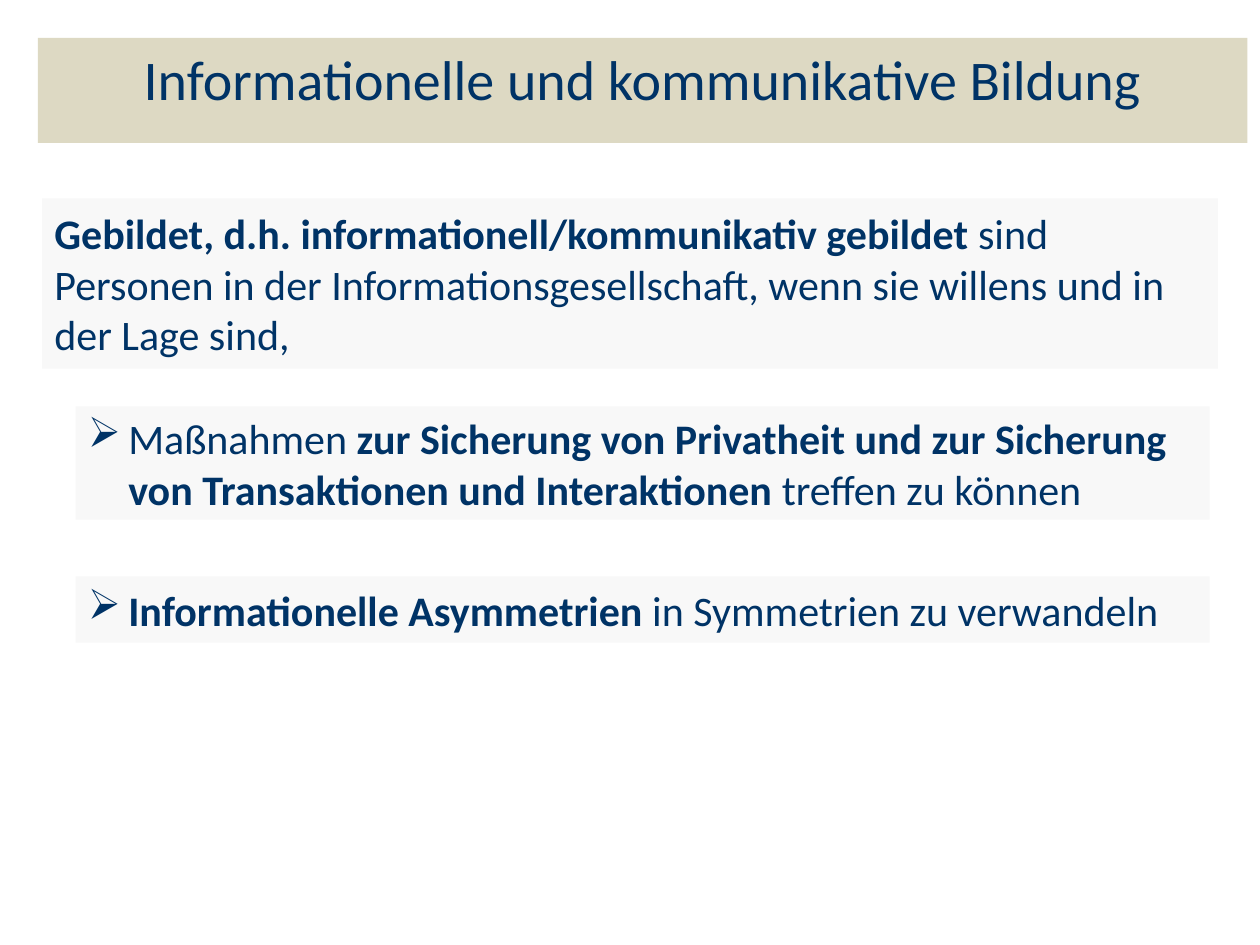
from pptx import Presentation
from pptx.dml.color import RGBColor
from pptx.enum.shapes import MSO_SHAPE
from pptx.enum.text import MSO_ANCHOR, MSO_AUTO_SIZE, PP_ALIGN
from pptx.oxml.ns import qn
from pptx.util import Inches, Pt
from lxml import etree

RECTANGLE = MSO_SHAPE.RECTANGLE
TOP, MIDDLE = MSO_ANCHOR.TOP, MSO_ANCHOR.MIDDLE
LEFT, CENTER = PP_ALIGN.LEFT, PP_ALIGN.CENTER
GROW = MSO_AUTO_SIZE.SHAPE_TO_FIT_TEXT
TITLE_ONLY = 5
COLORS = {"text": "003366", "panel": "F8F8F8", "banner": "DDD9C3"}


class SlideBuilder:
    font = "Calibri"
    title_size = 32
    body_size = 24
    bullet_indent = Inches(0.32)

    def __init__(self, deck):
        self.width, self.height = deck.slide_width, deck.slide_height
        self.page = deck.slides.add_slide(deck.slide_layouts[TITLE_ONLY])

    def frame(self, left, top, width, height):
        return (round(left * self.width), round(top * self.height),
                round(width * self.width), round(height * self.height))

    def paint(self, shape, color):
        shape.fill.solid()
        shape.fill.fore_color.rgb = RGBColor.from_string(COLORS[color])
        shape.line.fill.background()

    def set_spans(self, shape, spans, size, align, anchor):
        text_frame = shape.text_frame
        text_frame.word_wrap = True
        text_frame.auto_size = GROW
        text_frame.vertical_anchor = anchor
        para = text_frame.paragraphs[0]
        para.alignment = align
        for text, bold in spans:
            span = para.add_run()
            span.text = text
            span.font.name = self.font
            span.font.size = Pt(size)
            span.font.bold = bold
            span.font.color.rgb = RGBColor.from_string(COLORS["text"])
        return para

    def title(self, text, area):
        box = self.page.shapes.title
        box.left, box.top, box.width, box.height = self.frame(*area)
        self.paint(box, "banner")
        self.set_spans(box, [(text, False)], self.title_size, CENTER, TOP)

    def panel(self, spans, area):
        box = self.page.shapes.add_shape(RECTANGLE, *self.frame(*area))
        box.shadow.inherit = False
        self.paint(box, "panel")
        return self.set_spans(box, spans, self.body_size, LEFT, MIDDLE)

    def bullet_panel(self, spans, area):
        properties = self.panel(spans, area)._p.get_or_add_pPr()
        properties.set("marL", str(int(self.bullet_indent)))
        properties.set("indent", str(-int(self.bullet_indent)))
        etree.SubElement(properties, qn("a:buChar")).set("char", "➢")


def main():
    deck = Presentation()
    deck.slide_width, deck.slide_height = Inches(10), Inches(7.5)
    slide = SlideBuilder(deck)
    slide.title("Informationelle und kommunikative Bildung",
                (0.03, 0.04, 0.96, 0.09))
    slide.panel([
        ("Gebildet, d.h. informationell/kommunikativ gebildet ", True),
        ("sind Personen in der Informationsgesellschaft, "
         "wenn sie willens und in der Lage sind,", False),
    ], (1 / 30, 0.21, 28 / 30, 0.18))
    bullets = [
        (0.43, 0.12, [
            ("Maßnahmen ", False),
            ("zur Sicherung von Privatheit und zur Sicherung "
             "von Transaktionen und Interaktionen ", True),
            ("treffen zu können", False),
        ]),
        (0.61, 0.07, [
            ("Informationelle Asymmetrien ", True),
            ("in Symmetrien zu verwandeln", False),
        ]),
    ]
    for top, height, spans in bullets:
        slide.bullet_panel(spans, (0.06, top, 0.9, height))
    deck.save("out.pptx")


if __name__ == "__main__":
    main()
